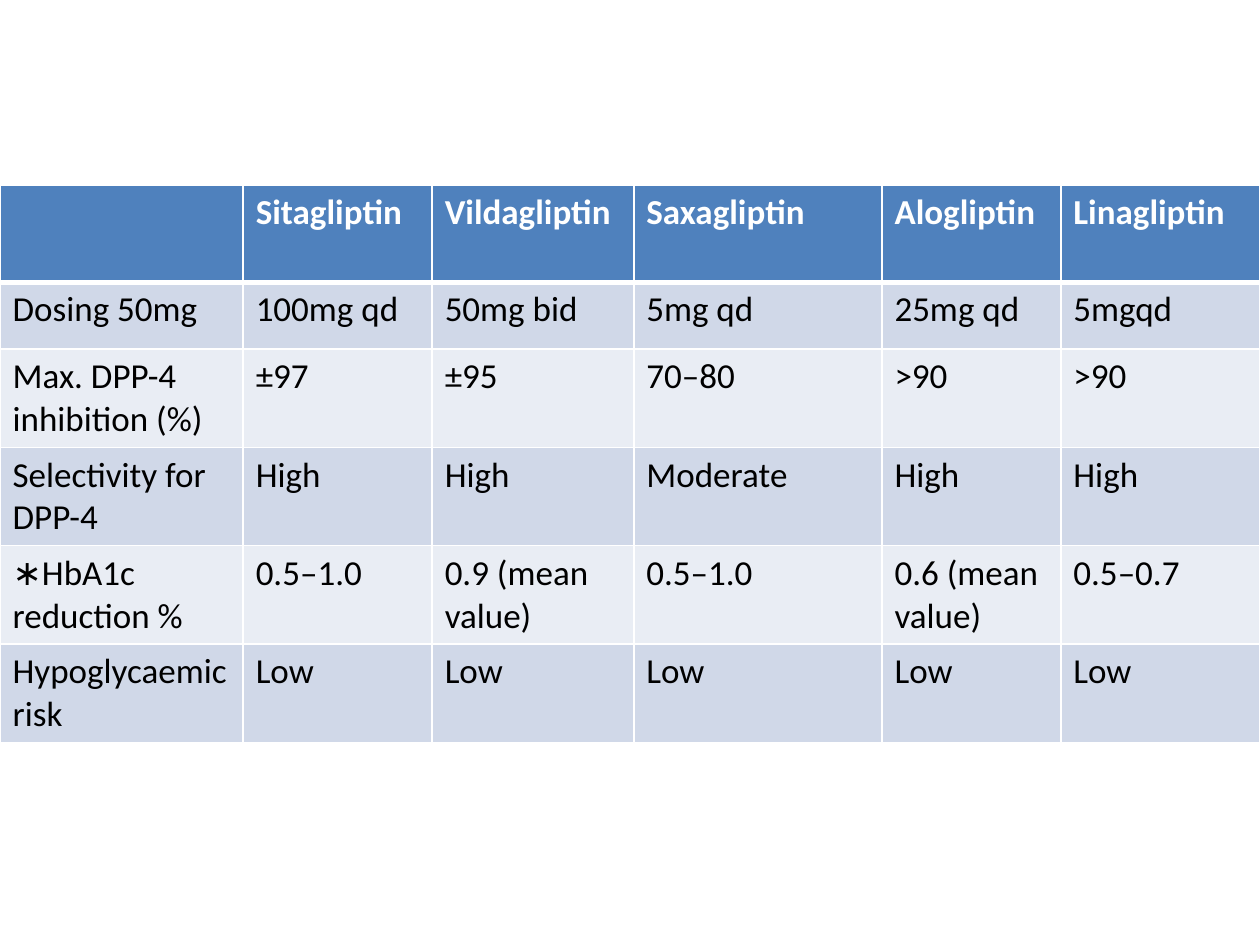
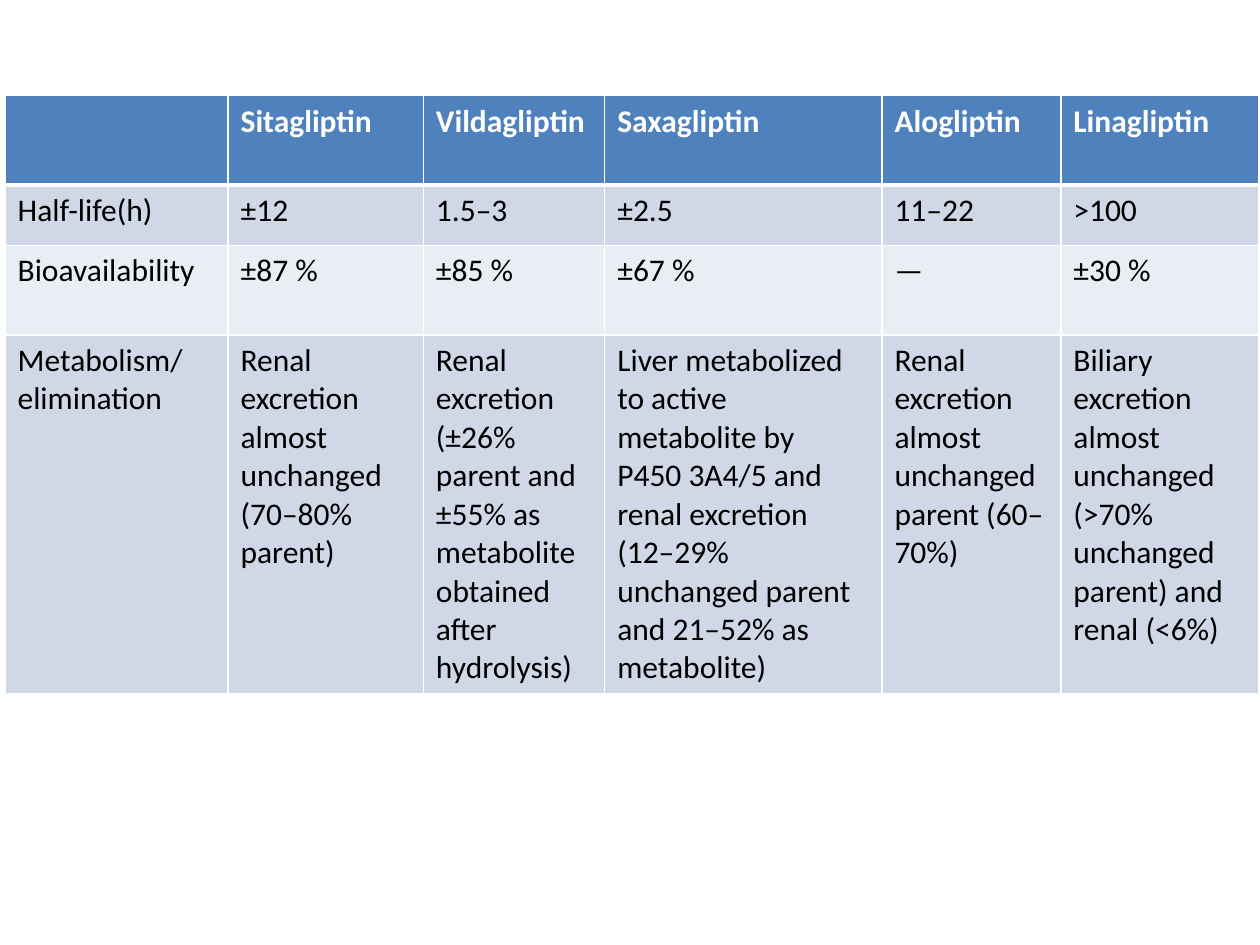
from dataclasses import dataclass

from lxml.etree import SubElement
from pptx import Presentation
from pptx.dml.color import RGBColor
from pptx.oxml.ns import qn
from pptx.util import Inches, Pt


@dataclass(frozen=True)
class Theme:
    font: str = "Calibri"
    header_fill: str = "4F81BD"
    band_fills: tuple = ("D0D8E8", "E9EDF4")
    header_text: str = "FFFFFF"
    body_text: str = "000000"
    border: str = "FFFFFF"
    border_width: float = 1
    header_rule_width: float = 3
    overview_size: int = 20
    kinetics_size: int = 18


theme = Theme()


def add_border(cell, side, width):
    line = SubElement(cell._tc.get_or_add_tcPr(), qn(f"a:{side}"), w=str(Pt(width)))
    fill = SubElement(line, qn("a:solidFill"))
    SubElement(fill, qn("a:srgbClr"), val=theme.border)


def style_cell(cell, text, row_index, size):
    is_header = row_index == 0
    for side in ("lnL", "lnR", "lnT", "lnB"):
        on_header_rule = (row_index, side) in ((0, "lnB"), (1, "lnT"))
        add_border(cell, side, theme.header_rule_width if on_header_rule else theme.border_width)
    fill = theme.header_fill if is_header else theme.band_fills[(row_index - 1) % 2]
    cell.fill.solid()
    cell.fill.fore_color.rgb = RGBColor.from_string(fill)
    cell.text_frame.text = text
    for paragraph in cell.text_frame.paragraphs:
        paragraph.font.name = theme.font
        paragraph.font.size = Pt(size)
        paragraph.font.bold = is_header
        color = theme.header_text if is_header else theme.body_text
        paragraph.font.color.rgb = RGBColor.from_string(color)


drugs = ["", "Sitagliptin", "Vildagliptin", "Saxagliptin", "Alogliptin", "Linagliptin"]

overview = {
    "left": 0,
    "top": 1.47,
    "size": theme.overview_size,
    "columns": [1.93, 1.5, 1.6, 1.97, 1.42, 1.58],
    "heights": [0.77, 0.53, 0.78, 0.78, 0.78, 0.78],
    "rows": [
        ["Dosing 50mg", "100mg qd", "50mg bid", "5mg qd", "25mg qd", "5mgqd"],
        ["Max. DPP-4\ninhibition (%)", "±97", "±95", "70–80", ">90", ">90"],
        ["Selectivity for\nDPP-4", "High", "High", "Moderate", "High", "High"],
        ["∗HbA1c reduction %", "0.5–1.0", "0.9 (mean value)", "0.5–1.0",
         "0.6 (mean value)", "0.5–0.7"],
        ["Hypoglycaemic\nrisk"] + ["Low"] * 5,
    ],
}

kinetics = {
    "left": 0.04,
    "top": 0.76,
    "size": theme.kinetics_size,
    "columns": [1.77, 1.55, 1.44, 2.2, 1.42, 1.57],
    "heights": [0.71, 0.48, 0.71, 2.84],
    "rows": [
        ["Half-life(h)", "±12", "1.5–3", "±2.5", "11–22", ">100"],
        ["Bioavailability", "±87 %", "±85 %", "±67 %", "—", "±30 %"],
        [
            "Metabolism/\nelimination",
            "Renal excretion\nalmost unchanged\n(70–80% parent)",
            "Renal excretion\n(±26% parent and\n±55% as metabolite\nobtained after\nhydrolysis)",
            "Liver metabolized to active metabolite by\n"
            "P450 3A4/5 and renal excretion (12–29% unchanged parent "
            "and 21–52% as metabolite)",
            "Renal excretion\nalmost unchanged\nparent (60–70%)",
            "Biliary excretion almost\nunchanged\n(>70% unchanged\nparent) and renal (<6%)",
        ],
    ],
}

presentation = Presentation()
presentation.slide_width = Inches(10)
presentation.slide_height = Inches(7.5)
blank_layout = presentation.slide_layouts[6]

for comparison in (overview, kinetics):
    slide = presentation.slides.add_slide(blank_layout)
    columns, heights = comparison["columns"], comparison["heights"]
    table = slide.shapes.add_table(
        len(heights), len(columns),
        Inches(comparison["left"]), Inches(comparison["top"]),
        Inches(sum(columns)), Inches(sum(heights)),
    ).table
    for column, width in zip(table.columns, columns):
        column.width = Inches(width)
    for row, height in zip(table.rows, heights):
        row.height = Inches(height)
    for row_index, texts in enumerate([drugs] + comparison["rows"]):
        for column_index, text in enumerate(texts):
            style_cell(table.cell(row_index, column_index), text, row_index, comparison["size"])

presentation.save("out.pptx")
